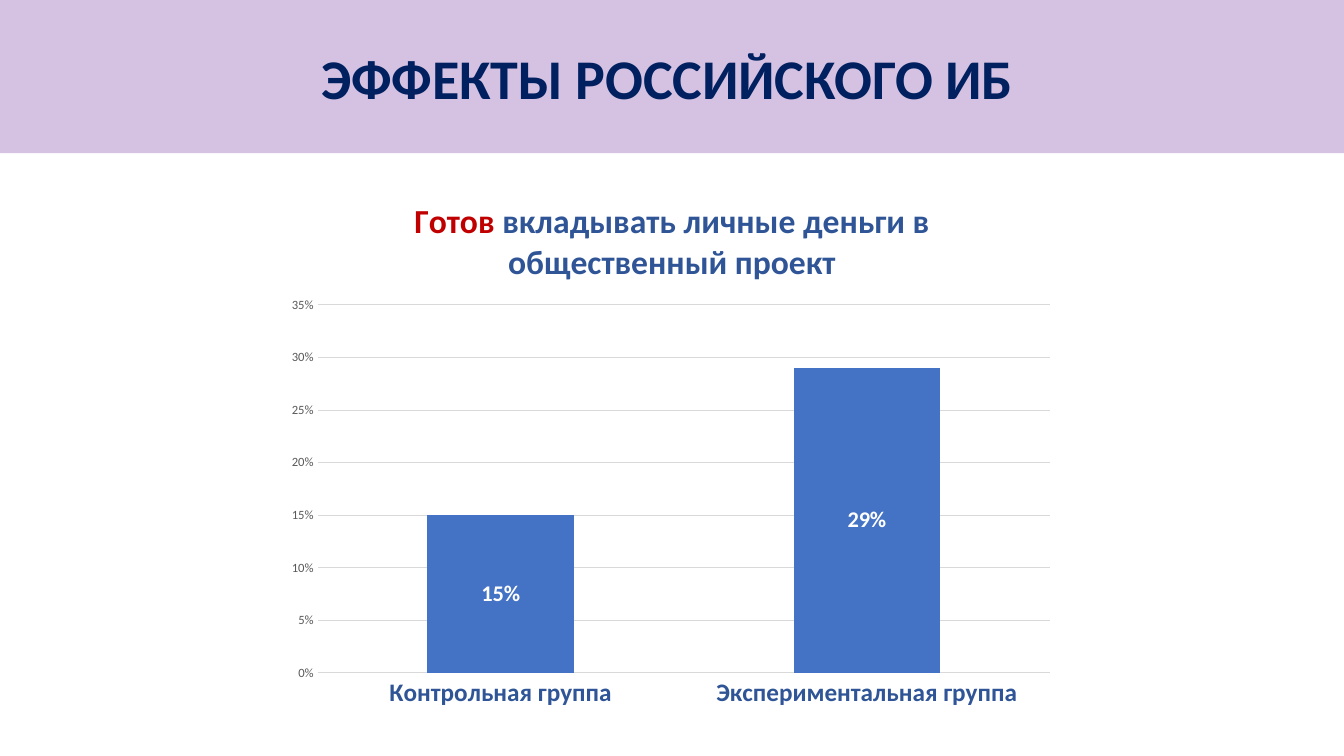
from lxml import etree
from pptx import Presentation
from pptx import util as u
from pptx.chart.data import CategoryChartData
from pptx.dml.color import RGBColor
from pptx.enum import chart as ch, shapes, text
from pptx.oxml import parse_xml
from pptx.oxml.ns import nsdecls, qn

PURPLE = RGBColor(0x70, 0x30, 0xA0)
NAVY = RGBColor(0x00, 0x20, 0x60)
RED = RGBColor(0xC0, 0x00, 0x00)
BLUE = RGBColor(0x2F, 0x55, 0x97)
BAR = RGBColor(0x44, 0x72, 0xC4)
GRID = RGBColor(0xD9, 0xD9, 0xD9)
GREY = RGBColor(0x59, 0x59, 0x59)
WHITE = RGBColor(0xFF, 0xFF, 0xFF)


class Deck:
    font = "Calibri"

    def __init__(self, prs):
        self.s = prs.slides.add_slide(prs.slide_layouts[5])

    def style(self, font, size, color, bold=False):
        font.name = self.font
        font.size = u.Pt(size)
        font.bold = bold
        font.color.rgb = color

    def line(self, fmt):
        fmt.line.color.rgb = GRID
        fmt.line.width = u.Pt(0.75)

    def band(self, box, color, opacity):
        sp = self.s.shapes.add_shape(shapes.MSO_SHAPE.RECTANGLE, *map(u.Inches, box))
        sp.shadow.inherit = False
        sp.line.fill.background()
        sp.fill.solid()
        sp.fill.fore_color.rgb = color
        clr = sp.fill._xPr.find(qn("a:solidFill"))[0]
        etree.SubElement(clr, qn("a:alpha"), val=str(opacity * 1000))
        self.s.shapes.title._element.addprevious(sp._element)

    def title(self, box, words):
        sp = self.s.shapes.title
        sp.left, sp.top, sp.width, sp.height = map(u.Inches, box)
        tf = sp.text_frame
        tf.text = words
        tf.word_wrap = True
        tf.vertical_anchor = text.MSO_ANCHOR.MIDDLE
        p = tf.paragraphs[0]
        p.alignment = text.PP_ALIGN.CENTER
        p.line_spacing = 0.9
        self.style(p.runs[0].font, 40, NAVY, True)

    def columns(self, box, heading, values, plot_box):
        data = CategoryChartData(number_format="0%")
        data.categories = list(values)
        data.add_series("Series 1", list(values.values()))
        chart = self.s.shapes.add_chart(
            ch.XL_CHART_TYPE.COLUMN_STACKED, *map(u.Inches, box), data).chart
        chart.font.name = self.font
        chart.font.size = u.Pt(10)
        chart.has_legend = False

        chart.has_title = True
        chart.chart_title.include_in_layout = False
        p = chart.chart_title.text_frame.paragraphs[0]
        for words, color in heading:
            r = p.add_run()
            r.text = words
            self.style(r.font, 24, color, True)

        cat, val = chart.category_axis, chart.value_axis
        for axis in (cat, val):
            axis.major_tick_mark = axis.minor_tick_mark = ch.XL_TICK_MARK.NONE
        self.style(cat.tick_labels.font, 18, BLUE, True)
        self.line(cat.format)
        self.style(val.tick_labels.font, 9, GREY)
        val.tick_labels.number_format = "0%"
        val.tick_labels.number_format_is_linked = False
        val.minimum_scale, val.maximum_scale, val.major_unit = 0, 0.35, 0.05
        val.format.line.fill.background()
        self.line(val.major_gridlines.format)

        plot = chart.plots[0]
        plot.gap_width, plot.overlap = 150, 100
        plot.vary_by_categories = False
        fill = plot.series[0].format.fill
        fill.solid()
        fill.fore_color.rgb = BAR
        plot.has_data_labels = True
        labels = plot.data_labels
        labels.show_value = True
        labels.position = ch.XL_LABEL_POSITION.CENTER
        labels.number_format = "0%"
        labels.number_format_is_linked = False
        self.style(labels.font, 16, WHITE, True)

        area = chart._chartSpace.chart.plotArea
        for old in area.findall(qn("c:layout")):
            area.remove(old)
        sizes = "".join(f'<c:{k} val="{v}"/>' for k, v in zip("xywh", plot_box))
        area.insert(0, parse_xml(
            f'<c:layout {nsdecls("c")}><c:manualLayout><c:layoutTarget val="inner"/>'
            f'<c:xMode val="edge"/><c:yMode val="edge"/>{sizes}'
            '</c:manualLayout></c:layout>'))


def main():
    prs = Presentation()
    prs.slide_width, prs.slide_height = u.Inches(13.33), u.Inches(7.5)
    deck = Deck(prs)
    deck.band((0, 0, 13.33, 1.52), PURPLE, 29)
    deck.title((1.05, -0.53, 11.26, 2.67), "ЭФФЕКТЫ РОССИЙСКОГО ИБ ")
    deck.columns(
        (2.76, 1.79, 7.81, 5.37),
        [("Готов", RED), (" вкладывать личные деньги в общественный проект", BLUE)],
        {"Контрольная группа": 0.15, "Экспериментальная группа": 0.29},
        (0.05, 0.23, 0.93, 0.68))
    prs.save("out.pptx")


if __name__ == "__main__":
    main()
